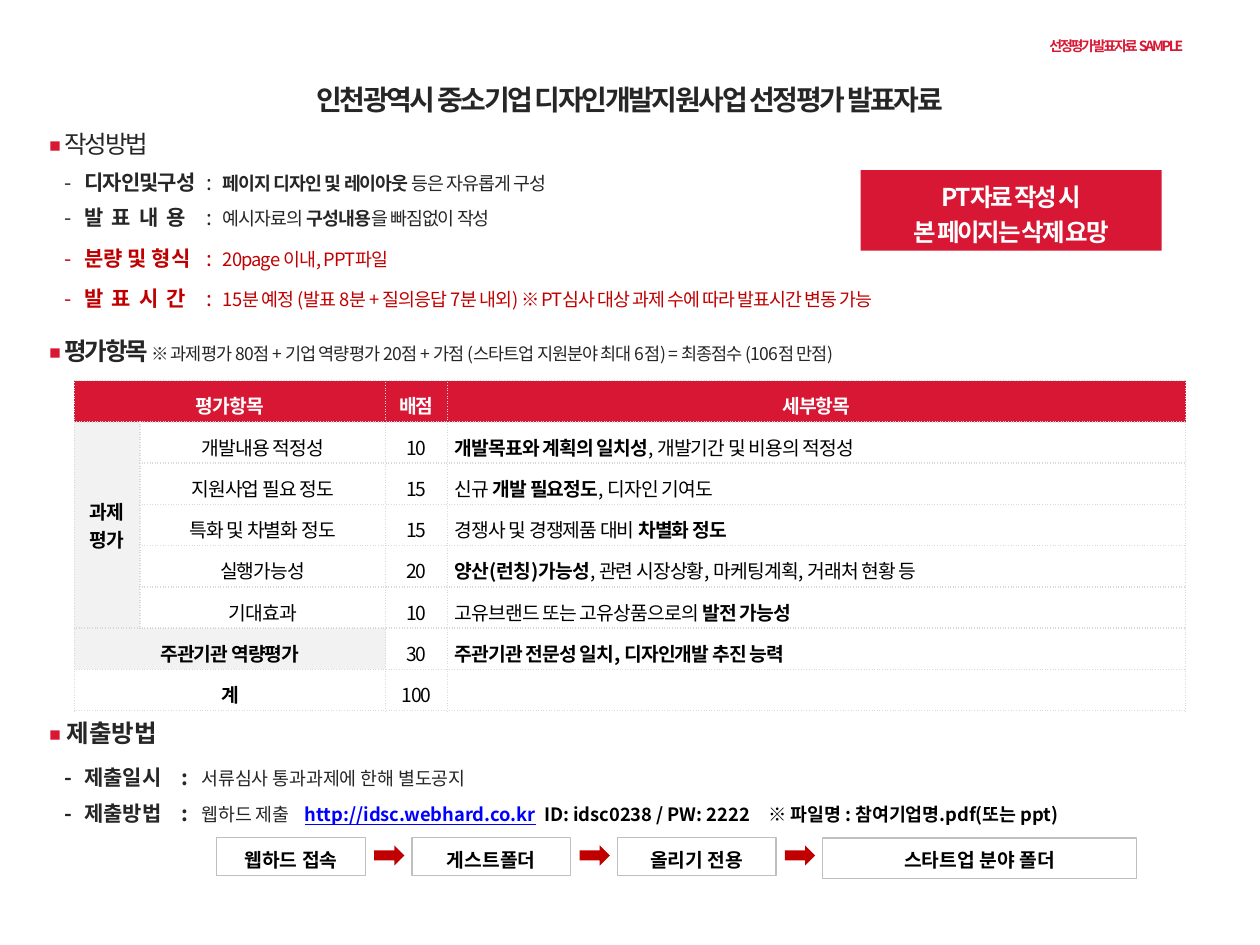
from lxml import etree
from pptx import Presentation, util as u
from pptx.dml.color import RGBColor
from pptx.enum import shapes, text
from pptx.oxml import ns

Inches, Pt = u.Inches, u.Pt
RED, DEEP, INK, BLACK = "D71733", "C00000", "262626", "000000"
WHITE, PALE, GREY, RULE = "FFFFFF", "F2F2F2", "BFBFBF", "D9D9D9"
AL = text.PP_ALIGN
MID, TOP = text.MSO_ANCHOR.MIDDLE, text.MSO_ANCHOR.TOP


def color(part, code):
    if hasattr(part, "solid"):
        part.solid()
        part = part.fore_color
    part.rgb = RGBColor.from_string(code)


def sub(node, tag, **vals):
    return etree.SubElement(node, ns.qn(tag), **vals)


class Deck:
    font = "Noto Sans CJK KR"

    def __init__(self):
        self.prs = Presentation()
        self.prs.slide_width, self.prs.slide_height = Inches(10), Inches(7.5)
        self.page = self.prs.slides.add_slide(self.prs.slide_layouts[6])

    def piece(self, para, words, fmt):
        run = para.add_run()
        run.text = words
        for key, val in fmt.items():
            if key == "color":
                color(run.font.color, val)
            elif key == "spc":
                run._r.get_or_add_rPr().set("spc", str(round(val * 100)))
            else:
                setattr(run.font, key, Pt(val) if key == "size" else val)
        run.font.name = self.font
        sub(run._r.get_or_add_rPr(), "a:ea", typeface=self.font)

    def frame(self, frame, paras, pad=(0.1, 0.05), anchor=TOP, **base):
        side, edge = map(Inches, pad)
        look = dict(word_wrap=True, vertical_anchor=anchor, auto_size=text.MSO_AUTO_SIZE.NONE,
                    margin_left=side, margin_right=side, margin_top=edge, margin_bottom=edge)
        for key, val in look.items():
            setattr(frame, key, val)
        self.lines(frame, paras, base)

    def lines(self, frame, paras, base):
        for i, (runs, form) in enumerate(paras):
            para = frame.add_paragraph() if i else frame.paragraphs[0]
            form = dict(form)
            tabs = form.pop("tabs", ())
            if not i:
                form.pop("space_before", None)
            for key, val in form.items():
                setattr(para, key, val)
            if tabs:
                stops = sub(para._p.get_or_add_pPr(), "a:tabLst")
                for pos in tabs:
                    sub(stops, "a:tab", pos=str(Inches(pos)), algn="l")
            for words, fmt in runs:
                self.piece(para, words, {**base, **fmt})

    def note(self, box, paras, **fmt):
        self.frame(self.page.shapes.add_textbox(*map(Inches, box)).text_frame, paras, **fmt)

    def shape(self, kind, box, fill, line=None):
        item = self.page.shapes.add_shape(kind, *map(Inches, box))
        item.shadow.inherit = False
        color(item.fill, fill)
        if line:
            color(item.line.fill, line)
            item.line.width = Pt(0.75)
        else:
            item.line.fill.background()
        return item

    def panel(self, box, fill, rows, line=None, **fmt):
        item = self.shape(shapes.MSO_SHAPE.RECTANGLE, box, fill, line)
        form = dict(alignment=AL.CENTER, line_spacing=1.2)
        self.frame(item.text_frame, [([(row, {})], form) for row in rows], **fmt)

    def cell(self, cell, rows, fill, form, pad, **fmt):
        cell.vertical_anchor = MID
        cell.margin_right = cell.margin_top = cell.margin_bottom = Inches(0.02)
        cell.margin_left = Inches(pad)
        color(cell.fill, fill)
        paras = [([(bit, {"bold": fmt["bold"] or n % 2 == 1})
                   for n, bit in enumerate(row.split("*")) if bit or row == ""], form)
                 for row in rows]
        self.lines(cell.text_frame, paras, fmt)

    def edge(self, cell):
        props = cell._tc.get_or_add_tcPr()
        for i, side in enumerate("LRTB"):
            line = etree.Element(ns.qn("a:ln" + side), w=str(Pt(1)))
            sub(sub(line, "a:solidFill"), "a:srgbClr", val=RULE)
            sub(line, "a:prstDash", val="sysDot")
            props.insert(i, line)

    def table(self, box, cols, tall, rows, spans):
        grid = self.page.shapes.add_table(len(rows), len(cols), *map(Inches, box)).table
        grid.first_row = grid.horz_banding = False
        for col, wide in zip(grid.columns, cols):
            col.width = Inches(wide)
        for row, high in zip(grid.rows, tall):
            row.height = Inches(high)
        for start, end in spans:
            grid.cell(*start).merge(grid.cell(*end))
        for r, row in enumerate(rows):
            for c, words in enumerate(row):
                cell = grid.cell(r, c)
                if words is not None:
                    head, side = r == 0, c == 0
                    fill = RED if head else PALE if side and r < len(rows) - 1 else WHITE
                    wide = c == len(cols) - 1 and not head
                    form = dict(alignment=AL.JUSTIFY if wide else AL.CENTER,
                                line_spacing=1.0 if "\n" in words else 1.3)
                    self.cell(cell, words.split("\n"), fill, form, 0.06 if wide else 0.02,
                              size=11, color=WHITE if head else BLACK,
                              bold=head or side, spc=-0.5)
                self.edge(cell)


def item(label, body, gap, tabs, tint=INK, mark=False, ls=1.2, **fmt):
    base = {"color": tint}
    return ([("\t-\t", {"bold": mark, **base}), (label, {"bold": True, **base, **fmt}),
             ("\t:\t", {"bold": mark, **base})]
            + [(words, {"size": 10.5, **base, **look}) for words, look in body],
            dict(line_spacing=ls, space_before=Pt(gap), tabs=tabs))


def main():
    deck = Deck()
    box = dict(pad=(0.12, 0.06), anchor=MID)
    bold = {"bold": True}
    mark = ("◾ ", dict(color=RED, size=14, bold=True))
    mid = dict(alignment=AL.CENTER)

    deck.note((1.32, 0.53, 7.36, 0.46),
              [([("인천광역시 중소기업 디자인개발지원사업 선정평가 발표자료", {})],
                dict(mid, line_spacing=1.2))],
              size=16, color=INK, bold=True, spc=-1.3, **box)

    tabs = (0.12, 0.28, 1.25, 1.38)
    guide = [
        ([(mark[0], {**mark[1], "spc": -1.3}), ("작성방법", dict(size=14, spc=-1.3))],
         dict(line_spacing=1.2)),
        item("디자인및구성", [("페이지 디자인 및 레이아웃 ", bold), ("등은 자유롭게 구성", {})], 3, tabs),
        item("발 표 내 용", [("예시자료의 ", {}), ("구성내용", bold), ("을 빠짐없이 작성", {})],
             3, tabs, spc=1),
        item("분량 및 형식", [("20page 이내, PPT파일", {})], 6, tabs, DEEP, spc=0),
        item("발 표 시 간",
             [("15분 예정 (발표 8분 + 질의응답 7분 내외) ※ PT심사 대상 과제 수에 따라 발표시간 변동 가능", {})],
             6, tabs, DEEP, spc=1),
    ]
    deck.note((0.27, 0.78, 9.16, 1.89), guide, size=12, color=INK, spc=-0.5, **box)

    deck.panel((6.83, 1.35, 2.39, 0.64), RED, ("PT자료 작성 시", "본 페이지는 삭제 요망"),
               size=14, color=WHITE, bold=True, spc=-1.3)

    deck.note((0.27, 2.55, 9.53, 0.47),
              [([mark, ("평가항목 ", dict(size=14, bold=True)),
                 ("※ 과제평가 80점 + 기업 역량평가 20점 + 가점 (스타트업 지원분야 최대 6점) = 최종점수 (106점 만점)",
                  dict(size=10, spc=-0.5))], {})],
              color=INK, spc=-1.3, **box)

    deck.table(
        (0.59, 3.02, 8.82, 2.48), (0.52, 1.95, 0.49, 5.86), [0.3] + [0.31] * 6 + [0.32],
        [("평가항목", None, "배점", "세부항목"),
         ("과제\n평가", "개발내용 적정성", "10", "*개발목표와 계획의 일치성*, 개발기간 및 비용의 적정성"),
         (None, "지원사업 필요 정도", "15", "신규 *개발 필요정도*, 디자인 기여도"),
         (None, "특화 및 차별화 정도", "15", "경쟁사 및 경쟁제품 대비 *차별화 정도*"),
         (None, "실행가능성", "20", "*양산(런칭)가능성*, 관련 시장상황, 마케팅계획, 거래처 현황 등"),
         (None, "기대효과", "10", "고유브랜드 또는 고유상품으로의 *발전 가능성*"),
         ("주관기관 역량평가", None, "30", "*주관기관 전문성 일치, 디자인개발 추진 능력*"),
         ("계", None, "100", "")],
        [((0, 0), (0, 1)), ((1, 0), (5, 0)), ((6, 0), (6, 1)), ((7, 0), (7, 1))])

    deck.note((8.15, 0.25, 1.42, 0.24), [([("선정평가 발표자료 SAMPLE", {})], mid)],
              size=8, color=RED, bold=True, spc=-1.3)

    tabs = (0.12, 0.28, 1.05, 1.21, 2.03, 3.93, 5.71)
    dark = dict(bold=True, color=BLACK)
    deck.note((0.27, 5.56, 9.16, 1.01), [
        ([mark, ("제출방법", dict(size=14, bold=True))], dict(line_spacing=1.5)),
        item("제출일시", [("서류심사 통과과제에 한해 별도공지", {})], 3, tabs, mark=True, ls=1.5),
        item("제출방법", [("웹하드 제출\t", {}),
                      ("http://idsc.webhard.co.kr", dict(bold=True, color="0000FF", underline=True)),
                      ("\tID: idsc0238 / PW: 2222\t※ 파일명 : 참여기업명.pdf(또는 ppt)", dark)],
             3, tabs, mark=True),
    ], size=12, color=INK, **box)

    for left, wide, high, label in ((1.72, 1.18, 0.3, "웹하드 접속"), (3.27, 1.26, 0.3, "게스트폴더"),
                                    (4.9, 1.26, 0.3, "올리기 전용"), (6.53, 2.49, 0.32, "스타트업 분야 폴더")):
        deck.panel((left, 6.65, wide, high), WHITE, [label], GREY, size=11, color=BLACK, bold=True)
    for i in range(3):
        deck.shape(shapes.MSO_SHAPE.RIGHT_ARROW, (2.97 + 1.63 * i, 6.71, 0.24, 0.16), DEEP)

    deck.prs.save("out.pptx")


if __name__ == "__main__":
    main()
